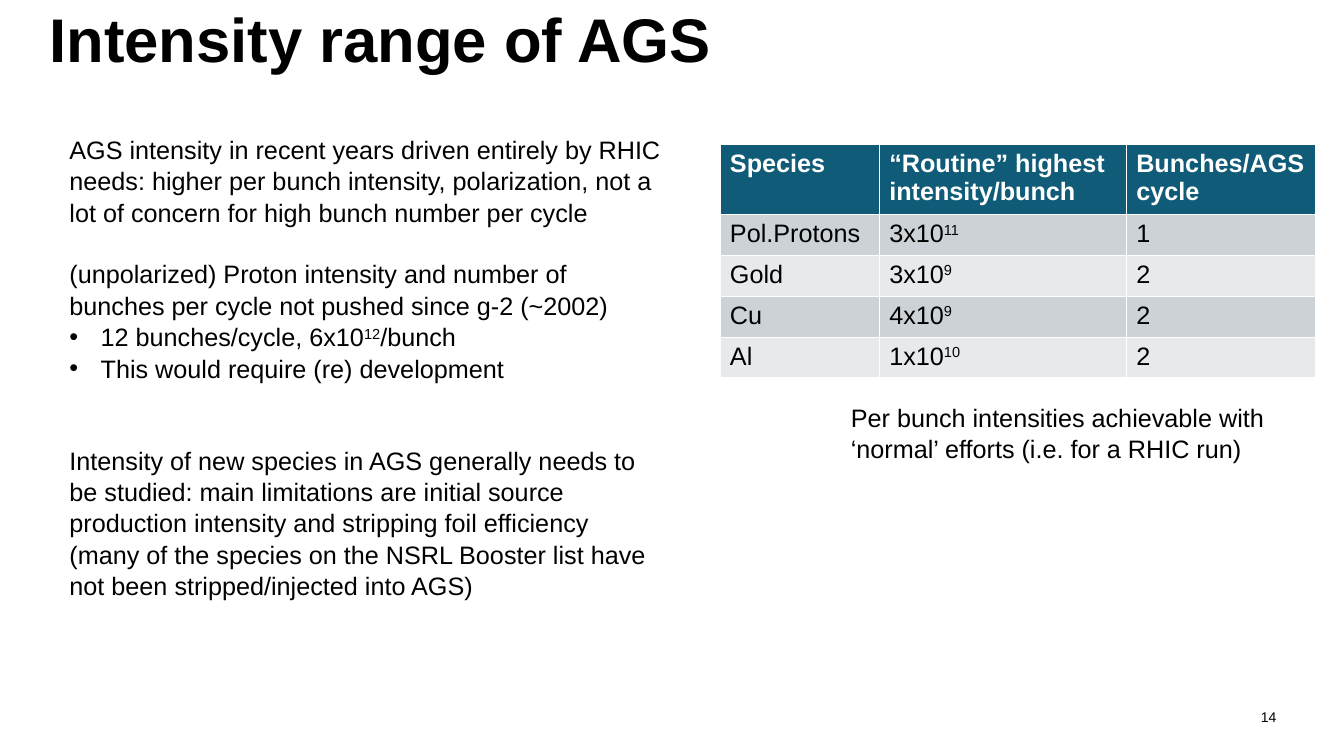
from dataclasses import dataclass

from lxml.etree import SubElement
from pptx import Presentation
from pptx.dml.color import RGBColor
from pptx.enum.text import MSO_ANCHOR as Anchor, PP_ALIGN as Align
from pptx.oxml.ns import qn
from pptx.util import Inches, Pt

COLORS = {
    "text": "000000",
    "header_text": "FFFFFF",
    "header": "105C78",
    "odd": "CCD2D6",
    "even": "E7EAEC",
}
LINE = 1.04
GAP = 21.6


@dataclass
class Para:
    text: str
    before: float = 0
    bullet: bool = False


@dataclass
class Box:
    left: float
    top: float
    width: float
    height: float
    paras: list[Para]


BOXES = [
    Box(8.34, 3.93, 4.78, 0.71, [
        Para("Per bunch intensities achievable with ‘normal’ efforts (i.e. for a RHIC run)"),
    ]),
    Box(0.59, 1.27, 6.08, 5.55, [
        Para("AGS intensity in recent years driven entirely by RHIC needs: higher per bunch "
             "intensity, polarization, not a lot of concern for high bunch number per cycle"),
        Para("(unpolarized) Proton intensity and number of bunches per cycle not pushed "
             "since g-2 (~2002)", GAP),
        Para("12 bunches/cycle, 6x10^12^/bunch", bullet=True),
        Para("This would require (re) development", bullet=True),
        Para("Intensity of new species in AGS generally needs to be studied: main limitations "
             "are initial source production intensity and stripping foil efficiency", 2 * GAP),
        Para("(many of the species on the NSRL Booster list have not been stripped/injected "
             "into AGS)"),
    ]),
]
ROWS = [
    ("Species", "“Routine” highest intensity/bunch", "Bunches/AGS cycle"),
    ("Pol.Protons", "3x10^11^", "1"),
    ("Gold", "3x10^9^", "2"),
    ("Cu", "4x10^9^", "2"),
    ("Al", "1x10^10^", "2"),
]
COL_WIDTHS = (1.58, 2.45, 1.88)
ROW_HEIGHT = 0.405


def color(name: str) -> RGBColor:
    return RGBColor.from_string(COLORS[name])


def add_runs(p, text: str, size: float = 18, bold: bool = False, ink: str = "text") -> None:
    fmt = {"name": "Arial", "size": Pt(size), "bold": bold}
    for i, part in enumerate(text.split("^")):
        if not part:
            continue
        r = p.add_run()
        r.text = part
        for key, value in fmt.items():
            setattr(r.font, key, value)
        r.font.color.rgb = color(ink)
        if i % 2:
            r._r.get_or_add_rPr().set("baseline", "30000")


def add_bullet(p) -> None:
    pPr = p._p.get_or_add_pPr()
    pPr.set("marL", str(Inches(0.31)))
    pPr.set("indent", str(-Inches(0.31)))
    SubElement(pPr, qn("a:buFont")).set("typeface", "Arial")
    SubElement(pPr, qn("a:buChar")).set("char", "•")


def add_box(s, box: Box) -> None:
    sp = s.shapes.add_textbox(*map(Inches, (box.left, box.top, box.width, box.height)))
    tf = sp.text_frame
    tf.word_wrap = True
    for i, para in enumerate(box.paras):
        p = tf.add_paragraph() if i else tf.paragraphs[0]
        if para.bullet:
            add_bullet(p)
        p.line_spacing = LINE
        if para.before:
            p.space_before = Pt(para.before)
        add_runs(p, para.text)


def add_title(s, text: str) -> None:
    sp = s.shapes.title
    sp.left, sp.top, sp.width, sp.height = map(Inches, (0.39, -0.03, 12.08, 0.91))
    tf = sp.text_frame
    tf.vertical_anchor = Anchor.MIDDLE
    p = tf.paragraphs[0]
    p.alignment = Align.LEFT
    p.line_spacing = 0.9
    add_runs(p, text, 44, True)


def add_species_table(s) -> None:
    frame = s.shapes.add_table(
        len(ROWS), len(COL_WIDTHS), Inches(7.14), Inches(1.43),
        Inches(sum(COL_WIDTHS)), Inches(ROW_HEIGHT * len(ROWS)))
    table = frame.table
    for col, width in zip(table.columns, COL_WIDTHS):
        col.width = Inches(width)
    for i, row in enumerate(ROWS):
        table.rows[i].height = Inches(ROW_HEIGHT)
        fill = "header" if i == 0 else "odd" if i % 2 else "even"
        ink = "text" if i else "header_text"
        for j, text in enumerate(row):
            cell = table.cell(i, j)
            cell.fill.solid()
            cell.fill.fore_color.rgb = color(fill)
            add_runs(cell.text_frame.paragraphs[0], text, bold=i == 0, ink=ink)


def add_page_number(s, text: str) -> None:
    sp = s.shapes.add_textbox(*map(Inches, (12.24, 6.91, 0.47, 0.4)))
    tf = sp.text_frame
    fmt = {
        "word_wrap": True, "vertical_anchor": Anchor.MIDDLE, "margin_left": 0,
        "margin_top": 0, "margin_right": Inches(0.05), "margin_bottom": 0,
    }
    for key, value in fmt.items():
        setattr(tf, key, value)
    p = tf.paragraphs[0]
    p.alignment = Align.RIGHT
    add_runs(p, text, 10)


def main() -> None:
    prs = Presentation()
    prs.slide_width, prs.slide_height = Inches(13.33), Inches(7.5)
    s = prs.slides.add_slide(prs.slide_layouts[5])
    add_page_number(s, "14")
    add_title(s, "Intensity range of AGS")
    add_species_table(s)
    for box in BOXES:
        add_box(s, box)
    prs.save("out.pptx")


if __name__ == "__main__":
    main()
